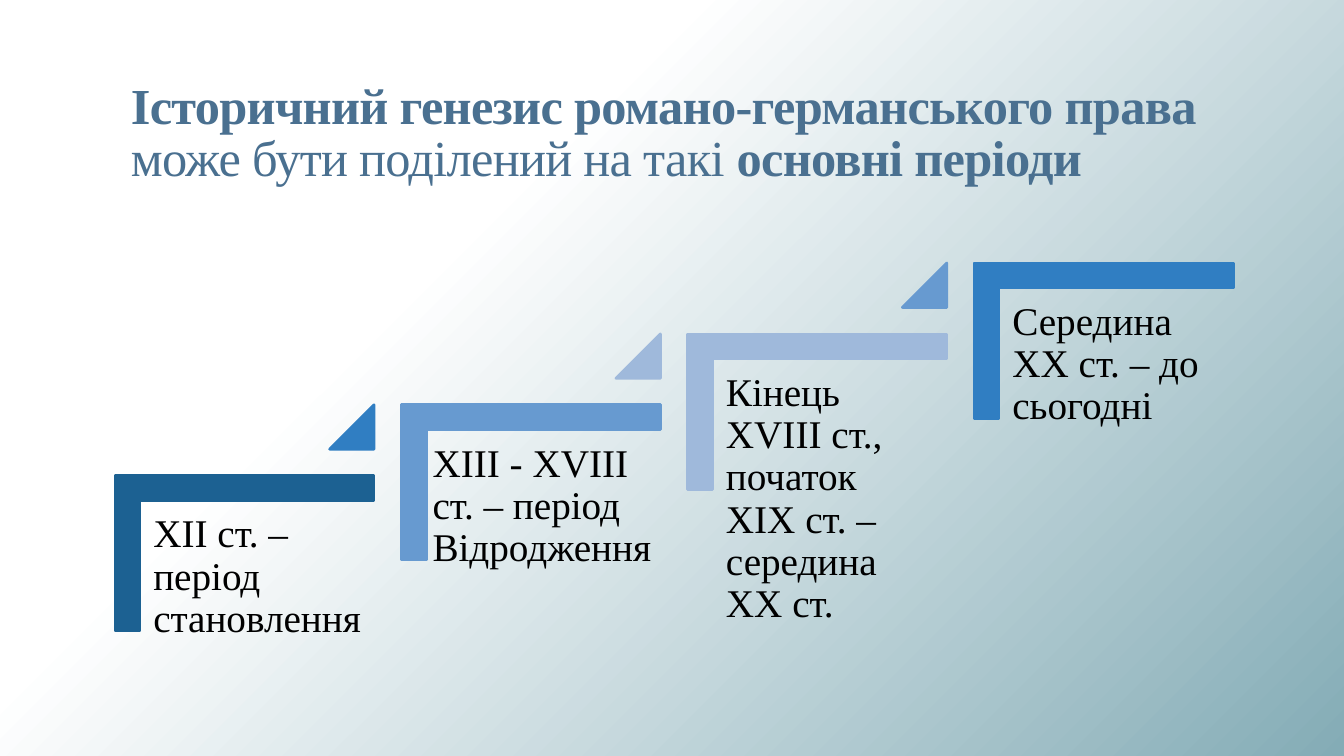
import copy
from dataclasses import dataclass

import pptx
import pptx.dml.color
import pptx.enum.shapes
import pptx.enum.text
import pptx.oxml.ns
import pptx.util

Inches = pptx.util.Inches
Shape = pptx.enum.shapes.MSO_SHAPE
Anchor = pptx.enum.text.MSO_ANCHOR


@dataclass(frozen=True)
class Theme:
    font: str = "Times New Roman"
    title_size: int = 36
    step_size: int = 28
    title_color: str = "4A7090"
    text_color: str = "000000"
    background: tuple = ((0, "FFFFFF"), (0.33, "FFFFFF"), (1, "84ACB6"))
    steps: tuple = ("1C6192", "679AD0", "9FB9DB", "307EC2")
    arrows: tuple = ("307EC2", "9FB9DB", "679AD0")


THEME = Theme()

TITLE = (
    ("Історичний генезис романо-германського права", True),
    (" може бути поділений на такі ", False),
    ("основні періоди", True),
)

# Text of each period, then the left offset and width of its text box
PERIODS = (
    ("ХІІ ст. – період становлення", 0.26, 2.32),
    ("ХІІІ - ХVІІІ ст. – період Відродження", 0.19, 2.46),
    ("Кінець ХVІІІ ст., початок ХІХ ст. – середина ХХ ст.", 0.26, 2.32),
    ("Середина ХХ ст. – до сьогодні", 0.26, 2.32),
)


def rgb(color):
    return pptx.dml.color.RGBColor.from_string(color)


def add_text(slide, box, runs, *, size, color, line_spacing,
             anchor=Anchor.TOP, inset_x=0.1, inset_y=0.05, tracking=None):
    """Add one wrapped paragraph made of (text, bold) runs."""
    tf = slide.shapes.add_textbox(*map(Inches, box)).text_frame
    tf.word_wrap = True
    tf.vertical_anchor = anchor
    tf.margin_left = tf.margin_right = Inches(inset_x)
    tf.margin_top = tf.margin_bottom = Inches(inset_y)
    p = tf.paragraphs[0]
    p.line_spacing = line_spacing
    for text, bold in runs:
        r = p.add_run()
        r.text = text
        r.font.name = THEME.font
        r.font.size = pptx.util.Pt(size)
        r.font.bold = bold
        r.font.color.rgb = rgb(color)
        if tracking is not None:
            r.font._element.set("spc", str(round(tracking * 100)))


def add_solid(slide, kind, box, color, adjustments):
    sp = slide.shapes.add_shape(kind, *map(Inches, box))
    sp.shadow.inherit = False
    sp.fill.solid()
    sp.fill.fore_color.rgb = rgb(color)
    sp.line.color.rgb = rgb(color)
    sp.line.width = pptx.util.Pt(2)
    for i, value in enumerate(adjustments):
        sp.adjustments[i] = value
    return sp


def set_background(slide):
    fill = slide.background.fill
    fill.gradient()
    fill.gradient_angle = 315
    stops = slide.element.find(".//" + pptx.oxml.ns.qn("a:gsLst"))
    stops.append(copy.deepcopy(stops[-1]))
    for stop, (position, color) in zip(fill.gradient_stops, THEME.background):
        stop.position = position
        stop.color.rgb = rgb(color)


def add_title(slide, box):
    add_text(slide, box, TITLE, size=THEME.title_size, color=THEME.title_color,
             line_spacing=0.85, anchor=Anchor.BOTTOM, tracking=-0.5)


def add_step(slide, box, period, color):
    """Draw a corner turned to open down and right, with its text inside."""
    left, top, width, height = box
    text, text_dx, text_width = period
    shift = (width - height) / 2
    corner = add_solid(slide, Shape.CORNER,
                       (left + shift, top - shift, height, width),
                       color, (0.161, 0.161))
    corner.rotation = 90
    add_text(slide, (left + text_dx, top + 0.26, text_width, 2.03),
             [(text, False)], size=THEME.step_size, color=THEME.text_color,
             line_spacing=0.9, inset_x=0.12, inset_y=0.12)


def add_staircase(slide, box):
    """Raise the steps evenly from the bottom left to the top right of the box."""
    left, top, width, height = box
    step_w, step_h, arrow = 2.57, 1.54, 0.44
    gaps = len(PERIODS) - 1
    dx, dy = (width - step_w) / gaps, (height - step_h) / gaps
    for i, period in enumerate(PERIODS):
        x, y = left + i * dx, top + (gaps - i) * dy
        add_step(slide, (x, y, step_w, step_h), period, THEME.steps[i])
        if i < gaps:
            add_solid(slide, Shape.ISOSCELES_TRIANGLE,
                      (x + step_w - arrow, y - dy, arrow, arrow),
                      THEME.arrows[i], (1,))


def main():
    prs = pptx.Presentation()
    prs.slide_width, prs.slide_height = Inches(13.33), Inches(7.5)
    slide = prs.slides.add_slide(prs.slide_layouts[6])
    set_background(slide)
    add_title(slide, (1.2, 0.31, 11, 1.59))
    add_staircase(slide, (1.14, 2.61, 11.09, 3.65))
    prs.save("out.pptx")


if __name__ == "__main__":
    main()
